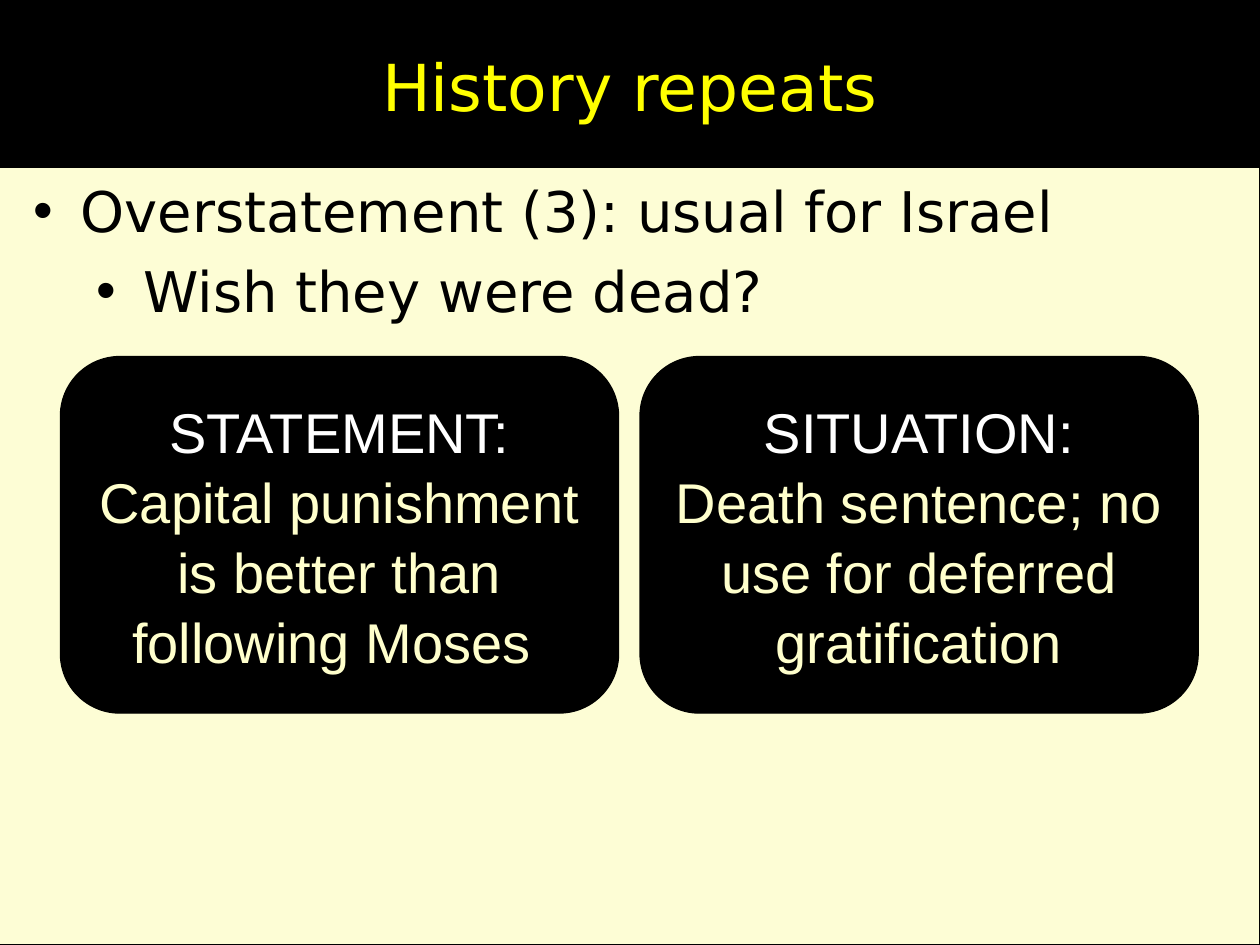
from lxml import etree
from pptx import Presentation
from pptx.dml.color import RGBColor
from pptx.enum.shapes import MSO_SHAPE
from pptx.enum.text import MSO_ANCHOR, PP_ALIGN
from pptx.oxml.ns import qn
from pptx.util import Inches, Pt

RECT, ROUNDED = MSO_SHAPE.RECTANGLE, MSO_SHAPE.ROUNDED_RECTANGLE
TOP, MIDDLE = MSO_ANCHOR.TOP, MSO_ANCHOR.MIDDLE
LEFT, CENTER = PP_ALIGN.LEFT, PP_ALIGN.CENTER

BLACK, WHITE, YELLOW = "000000", "FFFFFF", "FFFF00"
CREAM, PALE_CREAM = "FFFFCC", "FDFDD5"
SANS, ARIAL = "DejaVu Sans", "Arial"

TITLE = "History repeats"
POINTS = [
    (0, "Overstatement (3): usual for Israel"),
    (1, "Wish they were dead?"),
]
CARDS = [
    ("STATEMENT:", "Capital punishment is better than following Moses "),
    ("SITUATION:", "Death sentence; no use for deferred gratification"),
]
CARD_LEFT, CARD_TOP, CARD_SIZE, CARD_PITCH = 0.48, 2.83, 4.43, 4.6
CARD_HEIGHT = 2.83


def color(hex_string):
    return RGBColor.from_string(hex_string)


def add_panel(slide, preset, left, top, width, height, fill, line=None, anchor=MIDDLE):
    panel = slide.shapes.add_shape(
        preset, Inches(left), Inches(top), Inches(width), Inches(height))
    panel.shadow.inherit = False
    panel.fill.solid()
    panel.fill.fore_color.rgb = color(fill)
    if line:
        panel.line.color.rgb = color(line)
        panel.line.width = Pt(0.75)
    else:
        panel.line.fill.background()
    panel.text_frame.word_wrap = True
    panel.text_frame.vertical_anchor = anchor
    return panel.text_frame


def add_text(frame, text, size=32, font=ARIAL, ink=BLACK, align=CENTER,
             spacing=1.04, after=0, bullet_level=None):
    """Fill the frame's empty first paragraph, or append another one."""
    first = frame.paragraphs[0]
    paragraph = frame.add_paragraph() if first.runs else first
    paragraph.alignment = align
    paragraph.line_spacing = spacing
    paragraph.space_after = Pt(after)
    if bullet_level is not None:
        paragraph.level = bullet_level
        properties = paragraph._p.get_or_add_pPr()
        properties.set("marL", str(Inches(0.56 + 0.5 * bullet_level)))
        properties.set("indent", str(Inches(-0.37)))
        etree.SubElement(properties, qn("a:buFont")).set("typeface", ARIAL)
        etree.SubElement(properties, qn("a:buChar")).set("char", "•")
    run = paragraph.add_run()
    run.text = text
    run.font.size = Pt(size)
    run.font.name = font
    run.font.color.rgb = color(ink)


def main():
    deck = Presentation()
    deck.slide_width, deck.slide_height = Inches(10), Inches(7.5)
    slide = deck.slides.add_slide(deck.slide_layouts[6])

    title_bar = add_panel(slide, RECT, 0, 0, 10, 1.34, BLACK)
    add_text(title_bar, TITLE, size=37, font=SANS, ink=YELLOW)

    body = add_panel(slide, RECT, -0.02, 1.33, 10.02, 6.17, PALE_CREAM, BLACK, TOP)
    for level, point in POINTS:
        add_text(body, point, font=SANS, align=LEFT, after=6, bullet_level=level)

    for column, (heading, detail) in enumerate(CARDS):
        card = add_panel(slide, ROUNDED, CARD_LEFT + column * CARD_PITCH, CARD_TOP,
                         CARD_SIZE, CARD_HEIGHT, BLACK, BLACK)
        add_text(card, heading, ink=WHITE)
        add_text(card, detail, ink=CREAM)

    deck.save("out.pptx")


if __name__ == "__main__":
    main()
